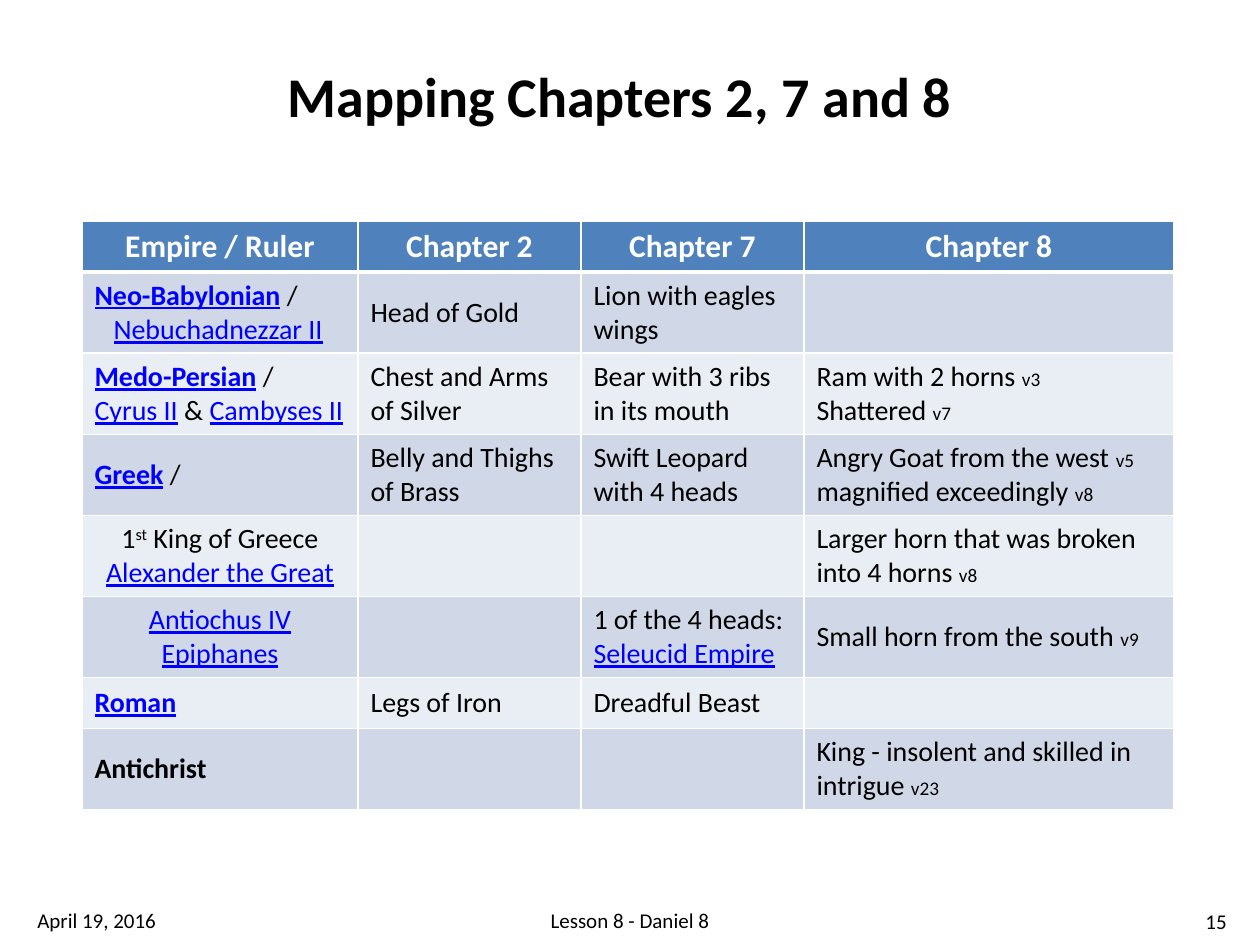
from lxml import etree
from pptx import Presentation
from pptx import util as u
from pptx.dml.color import RGBColor
from pptx.enum import text
from pptx.oxml import ns

TITLE = "Mapping Chapters 2, 7 and 8"
HEADINGS = ["Empire / Ruler", "Chapter 2", "Chapter 7", "Chapter 8"]
CENTER, INDENT = "center", "indent"

# Each cell lists its paragraphs; each paragraph lists (words, style) spans.
ROWS = [
    [
        [[("Neo-Babylonian", "empire"), (" /", "body")], [("Nebuchadnezzar II", "link"), INDENT]],
        [[("Head of Gold", "body")]],
        [[("Lion with eagles wings", "body")]],
        [],
    ],
    [
        [[("Medo-Persian", "empire"), (" /", "body")],
         [("Cyrus II", "link"), (" & ", "body"), ("Cambyses II", "link")]],
        [[("Chest and Arms of Silver", "body")]],
        [[("Bear with 3 ribs in its mouth", "body")]],
        [[("Ram with 2 horns ", "body"), ("v3", "verse")], [("Shattered ", "body"), ("v7", "verse")]],
    ],
    [
        [[("Greek", "empire"), (" /", "body")]],
        [[("Belly and Thighs of Brass", "body")]],
        [[("Swift Leopard with 4 heads", "body")]],
        [[("Angry Goat from the west ", "body"), ("v5", "verse"),
          (" magnified exceedingly ", "body"), ("v8", "verse")]],
    ],
    [
        [[("1", "body"), ("st", "ordinal"), (" King of Greece ", "body"),
          ("Alexander the Great", "link"), CENTER]],
        [],
        [],
        [[("Larger horn that was broken into 4 horns ", "body"), ("v8", "verse")]],
    ],
    [
        [[("Antiochus IV Epiphanes", "link"), CENTER]],
        [],
        [[("1 of the 4 heads:", "body"), (" Seleucid Empire", "link")]],
        [[("Small horn from the south ", "body"), ("v9", "verse")]],
    ],
    [
        [[("Roman", "empire")]],
        [[("Legs of Iron", "body")]],
        [[("Dreadful Beast", "body")]],
        [],
    ],
    [
        [[("Antichrist", "strong")]],
        [],
        [],
        [[("King - insolent and skilled in intrigue ", "body"), ("v23", "verse")]],
    ],
]
FOOTERS = [
    ("April 19, 2016", (25, 895, 215, 50), text.PP_ALIGN.LEFT),
    ("Lesson 8 - Daniel 8", (194, 895, 872, 50), text.PP_ALIGN.CENTER),
    ("15", (1144, 896, 95, 50), text.PP_ALIGN.RIGHT),
]
COLUMNS = [276, 223, 223, 370]
HEIGHTS = [51, 81, 81, 81, 81, 81, 51, 81]

THEME = {
    "font": "Calibri",
    "header": "4F81BD",
    "bands": ["D0D8E8", "E9EDF4"],
    "border": "FFFFFF",
    "styles": {
        "title": {"size": 32, "color": "000000", "bold": True},
        "heading": {"size": 18, "color": "FFFFFF", "bold": True},
        "body": {"size": 16, "color": "000000"},
        "strong": {"size": 16, "color": "000000", "bold": True},
        "link": {"size": 16, "color": "0000FF", "underline": True},
        "empire": {"size": 16, "color": "0000FF", "bold": True, "underline": True},
        "verse": {"size": 11, "color": "000000"},
        "ordinal": {"size": 16, "color": "000000", "baseline": 30000},
        "footer": {"size": 12, "color": "000000"},
    },
}


def px(length):
    return u.Emu(round(length * 914400 / 126))


def place(shape, box):
    shape.left, shape.top, shape.width, shape.height = map(px, box)


def style_span(span, name):
    style = THEME["styles"][name]
    span.font.name = THEME["font"]
    span.font.size = u.Pt(style["size"])
    span.font.color.rgb = RGBColor.from_string(style["color"])
    span.font.bold = style.get("bold", False)
    span.font.underline = style.get("underline", False)
    if "baseline" in style:
        span.font._element.set("baseline", str(style["baseline"]))


def write_line(frame, words, name, align):
    frame.text = words
    frame.word_wrap = True
    frame.vertical_anchor = text.MSO_ANCHOR.MIDDLE
    para = frame.paragraphs[0]
    para.alignment = align
    style_span(para.runs[0], name)


def write_cell(cell, paragraphs):
    frame = cell.text_frame
    for index, parts in enumerate(paragraphs):
        para = frame.add_paragraph() if index else frame.paragraphs[0]
        para.alignment = text.PP_ALIGN.CENTER if CENTER in parts else text.PP_ALIGN.LEFT
        if INDENT in parts:
            para._p.get_or_add_pPr().set("marL", str(px(19)))
        for part in parts:
            if part not in (CENTER, INDENT):
                span = para.add_run()
                span.text, name = part
                style_span(span, name)


def paint_cell(cell, color, top=1, bottom=1):
    properties = cell._tc.get_or_add_tcPr()
    for side, width in (("L", 1), ("R", 1), ("T", top), ("B", bottom)):
        line = etree.SubElement(properties, ns.qn(f"a:ln{side}"), w=str(u.Pt(width)))
        fill = etree.SubElement(line, ns.qn("a:solidFill"))
        etree.SubElement(fill, ns.qn("a:srgbClr"), val=THEME["border"])
    cell.fill.solid()
    cell.fill.fore_color.rgb = RGBColor.from_string(color)


def add_mapping(page):
    box = (82, 221, sum(COLUMNS), sum(HEIGHTS))
    table = page.shapes.add_table(len(HEIGHTS), len(COLUMNS), *map(px, box)).table
    for column, width in zip(table.columns, COLUMNS):
        column.width = px(width)
    for row, height in zip(table.rows, HEIGHTS):
        row.height = px(height)
    for index, heading in enumerate(HEADINGS):
        cell = table.cell(0, index)
        write_cell(cell, [[(heading, "heading"), CENTER]])
        paint_cell(cell, THEME["header"], bottom=3)
    for number, row in enumerate(ROWS, 1):
        for index, paragraphs in enumerate(row):
            cell = table.cell(number, index)
            cell.vertical_anchor = text.MSO_ANCHOR.MIDDLE
            write_cell(cell, paragraphs)
            paint_cell(cell, THEME["bands"][(number - 1) % 2], top=3 if number == 1 else 1)


def main():
    deck = Presentation()
    deck.slide_width, deck.slide_height = px(1260), px(945)
    page = deck.slides.add_slide(deck.slide_layouts[5])
    title = page.shapes.title
    place(title, (53, 16, 1134, 158))
    write_line(title.text_frame, TITLE, "title", text.PP_ALIGN.CENTER)
    add_mapping(page)
    for words, box, align in FOOTERS:
        footer = page.shapes.add_textbox(*map(px, box))
        write_line(footer.text_frame, words, "footer", align)
    deck.save("out.pptx")


if __name__ == "__main__":
    main()
